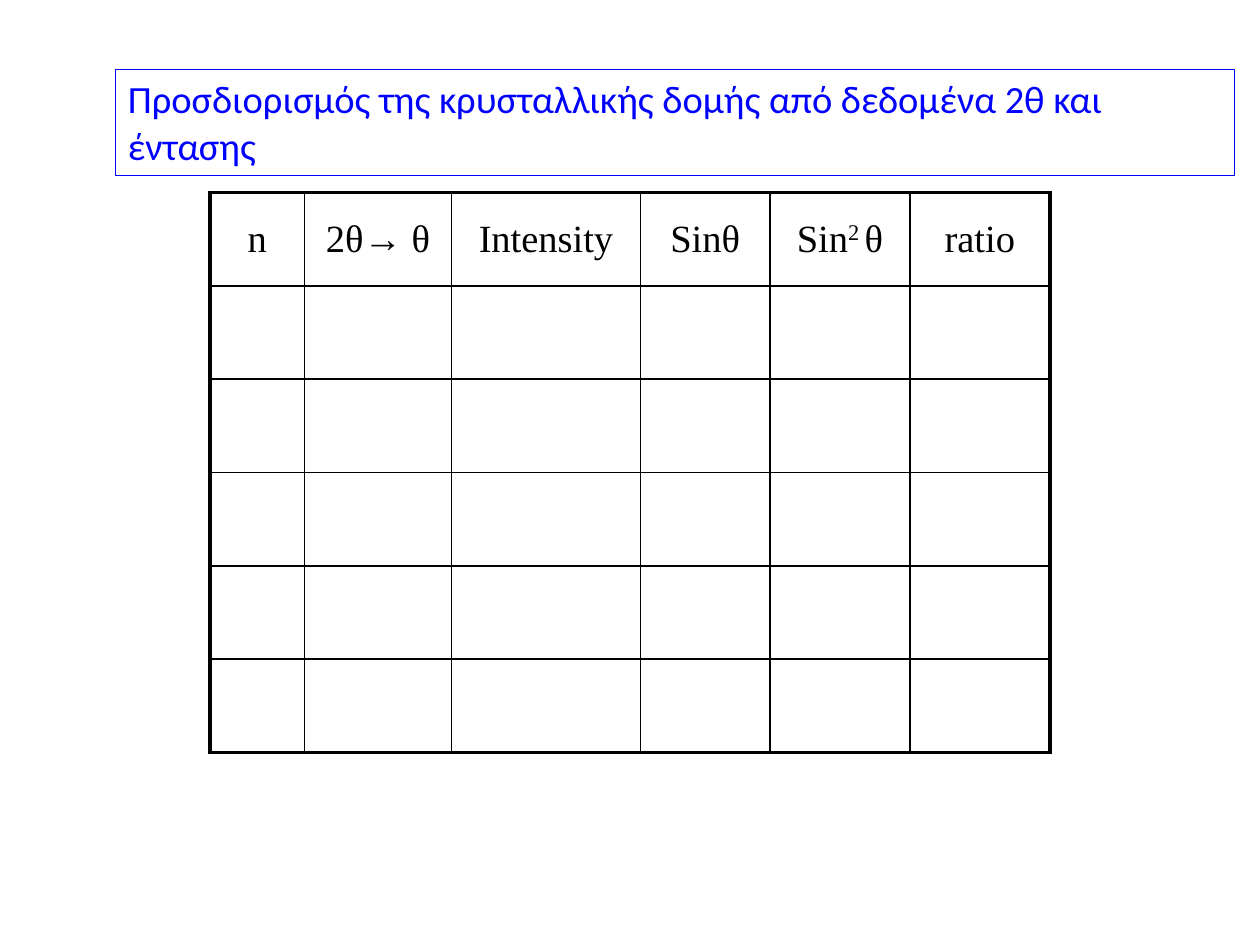
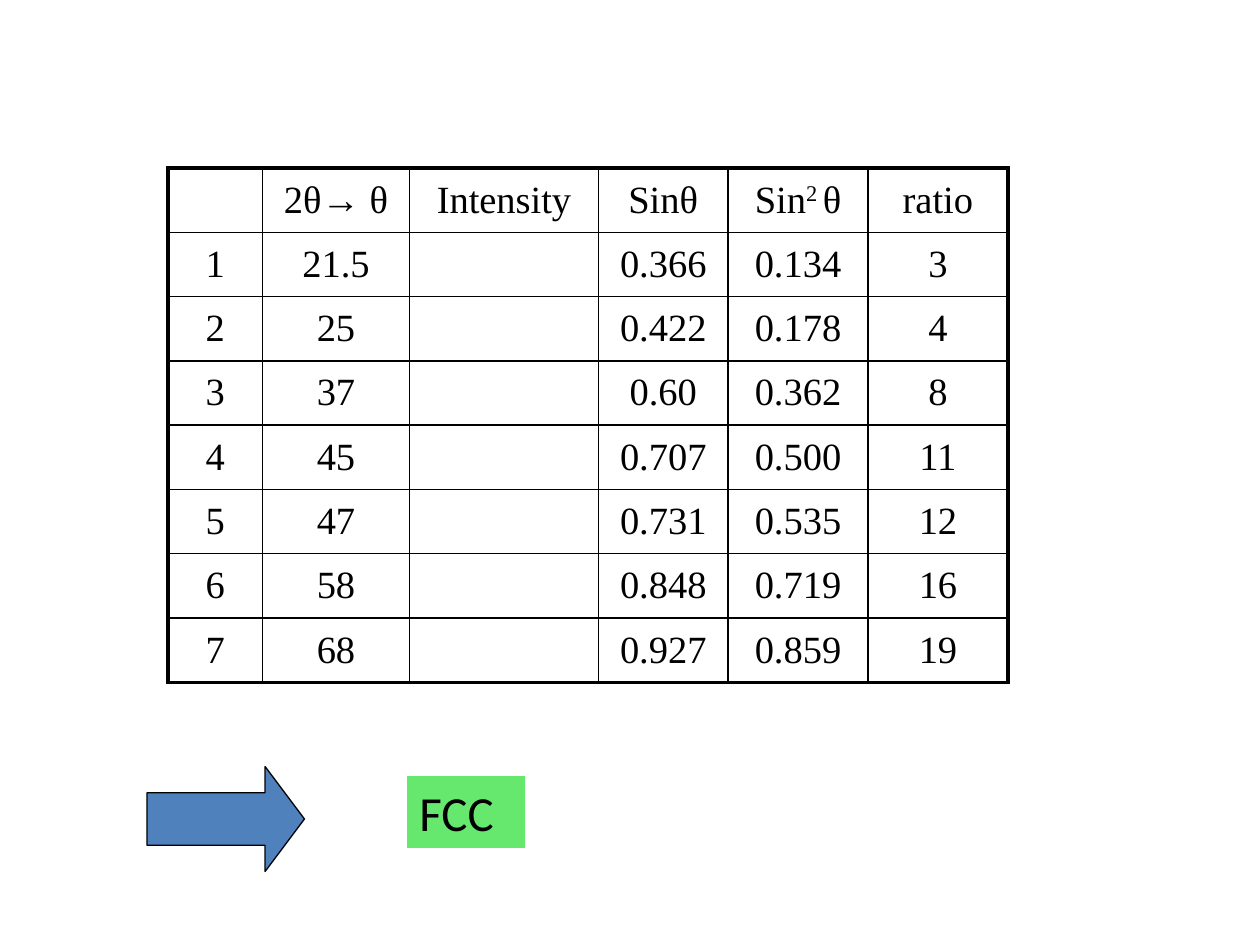
from lxml.etree import SubElement as sub
from pptx import Presentation
from pptx.dml.color import RGBColor
from pptx.enum.shapes import MSO_SHAPE as Form
from pptx.enum.text import MSO_ANCHOR as Anchor, MSO_AUTO_SIZE as Fit, PP_ALIGN as Align
from pptx.oxml.ns import qn
from pptx.util import Pt

hue = RGBColor.from_string
BLACK, BLUE, WHITE = "000000", "0000FF", "FFFFFF"
STEEL, GREEN = "4F81BD", "66E86F"
SANS, SERIF = "Calibri", "Times New Roman"
THIN, THICK = 1, 2.25
WIDTHS = [54, 84, 108, 74, 80, 80]


def write(frame, text, font=SANS, size=22, color=BLACK, align=Align.LEFT, before=4.4):
    """Fill the frame with one paragraph; parts between ^ marks are raised."""
    para = frame.paragraphs[0]
    para.alignment = align
    para.space_before = Pt(before)
    for i, part in enumerate(text.split("^")):
        run = para.add_run()
        run.text = part
        run.font.name = font
        run.font.size = Pt(size)
        run.font.color.rgb = hue(color)
        if i % 2:
            run.font._element.set("baseline", "30000")


def edge(cell, side, width):
    """Draw one border of a cell; side is L, R, T or B."""
    line = sub(cell._tc.get_or_add_tcPr(), qn("a:ln" + side), w=str(Pt(width)))
    fill = sub(line, qn("a:solidFill"))
    sub(fill, qn("a:srgbClr"), val=BLACK)


deck = Presentation()
deck.slide_width, deck.slide_height = Pt(720), Pt(540)
blank = deck.slide_layouts[6]
task, answer = [deck.slides.add_slide(blank) for _ in range(2)]

# Tables of peaks: blank to fill in, then solved
heads = ["2θ→ θ", "Intensity", "Sinθ", "Sin^2 ^θ", "ratio"]
peaks = [
    ["1", "21.5", "", "0.366", "0.134", "3"],
    ["2", "25", "", "0.422", "0.178", "4"],
    ["3", "37", "", "0.60", "0.362", "8"],
    ["4", "45", "", "0.707", "0.500", "11"],
    ["5", "47", "", "0.731", "0.535", "12"],
    ["6", "58", "", "0.848", "0.719", "16"],
    ["7", "68", "", "0.927", "0.859", "19"],
]
empty = [[""] * len(WIDTHS)] * 5
grids = [
    (task, 120, 110, 320, [["n"] + heads] + empty),
    (answer, 96, 96, 294, [[""] + heads] + peaks),
]
for slide, left, top, height, rows in grids:
    last, end = len(rows) - 1, len(WIDTHS) - 1
    table = slide.shapes.add_table(len(rows), len(WIDTHS), Pt(left), Pt(top),
                                   Pt(sum(WIDTHS)), Pt(height)).table
    table.first_row = table.horz_banding = False
    for col, width in zip(table.columns, WIDTHS):
        col.width = Pt(width)
    for r, row in enumerate(rows):
        table.rows[r].height = Pt(height / len(rows))
        for c, text in enumerate(row):
            cell = table.cell(r, c)
            cell.vertical_anchor = Anchor.MIDDLE
            if text:
                write(cell.text_frame, text, font=SERIF, align=Align.CENTER)
            outer = {"L": c == 0, "R": c == end, "T": r == 0, "B": r == last}
            for side, rim in outer.items():
                edge(cell, side, THICK if rim else THIN)
            cell.fill.background()

# Title of the task
title = task.shapes.add_textbox(Pt(66), Pt(39.6), Pt(639.4), Pt(60.5))
title.fill.solid()
title.fill.fore_color.rgb = hue(WHITE)
title.line.color.rgb = hue(BLUE)
title.line.width = Pt(0.5)
title.text_frame.word_wrap = True
title.text_frame.auto_size = Fit.SHAPE_TO_FIT_TEXT
write(title.text_frame, "Προσδιορισμός της κρυσταλλικής δομής από δεδομένα 2θ και έντασης",
      color=BLUE)

# Arrow to the structure found
arrow = answer.shapes.add_shape(Form.RIGHT_ARROW, Pt(84), Pt(438), Pt(90), Pt(60))
arrow.adjustments[0], arrow.adjustments[1] = 0.5, 0.375
arrow.shadow.inherit = False
arrow.fill.solid()
arrow.fill.fore_color.rgb = hue(STEEL)
arrow.line.color.rgb = hue(BLACK)
arrow.line.width = Pt(0.75)

found = answer.shapes.add_textbox(Pt(232.6), Pt(443.5), Pt(67.5), Pt(41))
found.fill.solid()
found.fill.fore_color.rgb = hue(GREEN)
found.text_frame.word_wrap = False
found.text_frame.auto_size = Fit.SHAPE_TO_FIT_TEXT
write(found.text_frame, "FCC", size=28, before=0)

deck.save("out.pptx")
